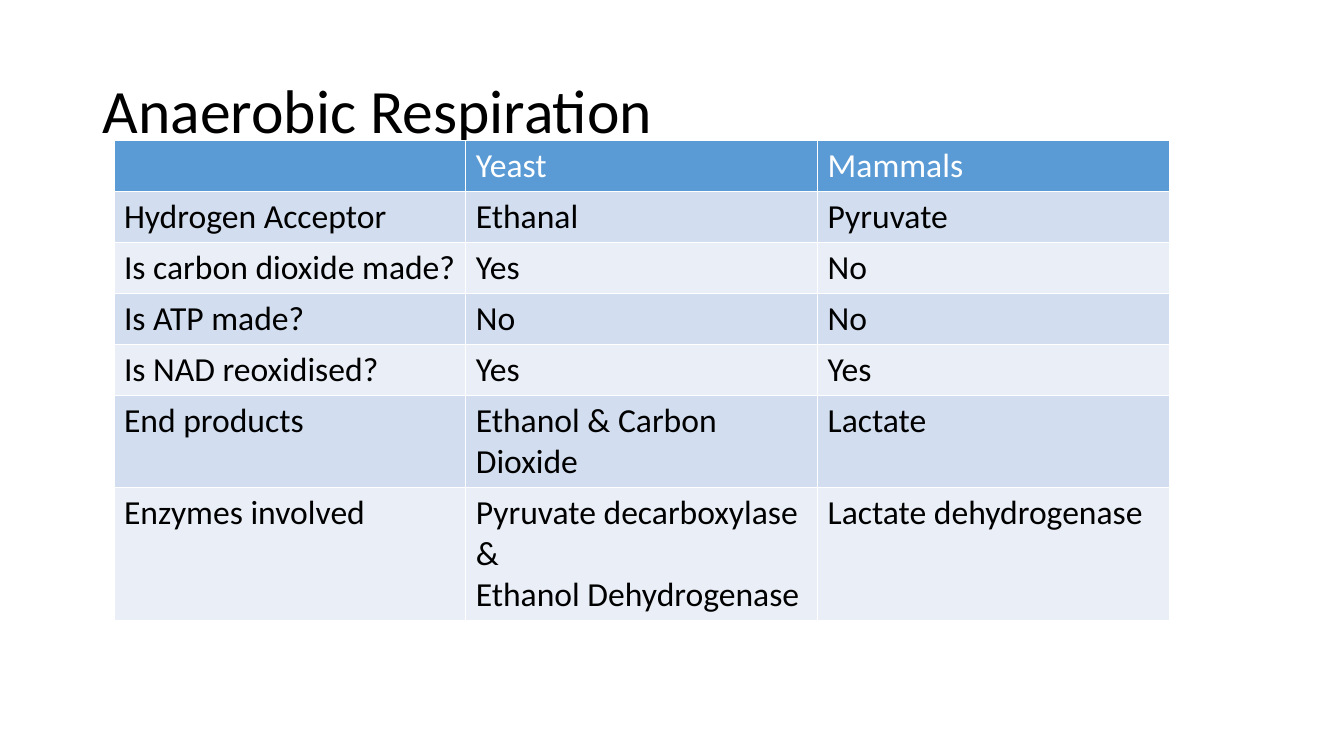
import dataclasses

import pptx
import pptx.dml.color
import pptx.enum.text
import pptx.slide
import pptx.table
import pptx.text.text
import pptx.util

RGBColor = pptx.dml.color.RGBColor
BLACK = RGBColor(0x00, 0x00, 0x00)
WHITE = RGBColor(0xFF, 0xFF, 0xFF)
BLUE = RGBColor(0x5B, 0x9B, 0xD5)
BANDS = (RGBColor(0xEA, 0xEF, 0xF7), RGBColor(0xD2, 0xDE, 0xEF))

WIDE, HIGH = pptx.util.Inches(13.33), pptx.util.Inches(7.5)
LEFT, TOP = pptx.util.Inches(1.13), pptx.util.Inches(1.39)
COLUMN = pptx.util.Inches(3.49)
LINE = pptx.util.Inches(0.4)
MARGIN = pptx.util.Inches(0.1)


@dataclasses.dataclass(frozen=True)
class Row:
    label: str
    yeast: str
    mammals: str
    lines: int = 1

    def texts(self) -> tuple[str, str, str]:
        return self.label, self.yeast, self.mammals

    def height(self) -> int:
        return self.lines * LINE + MARGIN


ROWS = (
    Row("", "Yeast", "Mammals"),
    Row("Hydrogen Acceptor", "Ethanal", "Pyruvate"),
    Row("Is carbon dioxide made?", "Yes", "No"),
    Row("Is ATP made?", "No", "No"),
    Row("Is NAD reoxidised?", "Yes", "Yes"),
    Row("End products", "Ethanol & Carbon Dioxide", "Lactate", 2),
    Row("Enzymes involved", "Pyruvate decarboxylase &\nEthanol Dehydrogenase",
        "Lactate dehydrogenase", 3),
)


def write(frame: pptx.text.text.TextFrame, text: str, size: int,
          color: RGBColor) -> None:
    frame.text = text
    form = {"name": "Calibri", "size": pptx.util.Pt(size), "bold": False}
    for part in frame.paragraphs:
        for key, value in form.items():
            setattr(part.font, key, value)
        part.font.color.rgb = color


def add_title(slide: pptx.slide.Slide, text: str) -> None:
    title = slide.shapes.title
    place = {"left": 0.069, "width": 0.863}
    for key, share in place.items():
        setattr(title, key, round(WIDE * share))
    title.top, title.height = pptx.util.Inches(0.4), pptx.util.Inches(1.45)
    write(title.text_frame, text, 44, BLACK)
    title.text_frame.vertical_anchor = pptx.enum.text.MSO_ANCHOR.MIDDLE
    form = {"alignment": pptx.enum.text.PP_ALIGN.LEFT, "line_spacing": 0.9}
    for key, value in form.items():
        setattr(title.text_frame.paragraphs[0], key, value)


def fill_cell(cell: pptx.table._Cell, text: str, fill: RGBColor,
              color: RGBColor) -> None:
    cell.fill.solid()
    cell.fill.fore_color.rgb = fill
    write(cell.text_frame, text, 24, color)


def add_grid(slide: pptx.slide.Slide, rows: tuple[Row, ...]) -> None:
    count = len(rows[0].texts())
    high = sum(row.height() for row in rows)
    table = slide.shapes.add_table(
        len(rows), count, LEFT, TOP, count * COLUMN, high).table
    for index, row in enumerate(rows):
        table.rows[index].height = row.height()
        fill, color = (BANDS[index % 2], BLACK) if index else (BLUE, WHITE)
        for column, text in enumerate(row.texts()):
            fill_cell(table.cell(index, column), text, fill, color)


def main() -> None:
    deck = pptx.Presentation()
    deck.slide_width, deck.slide_height = WIDE, HIGH
    slide = deck.slides.add_slide(deck.slide_layouts.get_by_name("Title Only"))
    add_title(slide, "Anaerobic Respiration")
    add_grid(slide, ROWS)
    deck.save("out.pptx")


if __name__ == "__main__":
    main()
